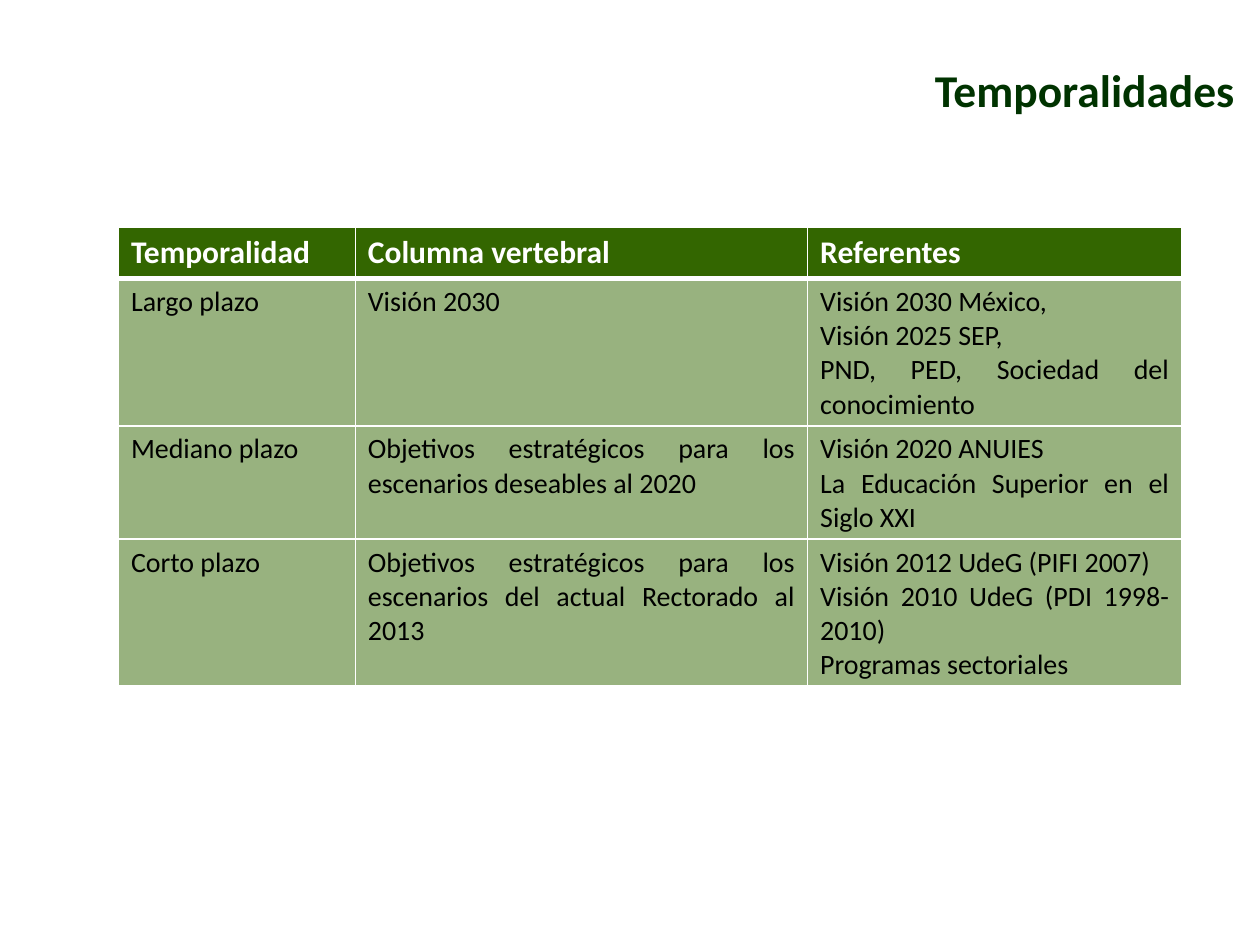
from dataclasses import dataclass

from lxml.etree import SubElement
from pptx import Presentation
from pptx.dml.color import RGBColor as Color
from pptx.enum.text import PP_ALIGN as Align
from pptx.oxml.ns import qn
from pptx.util import Inches, Pt


@dataclass(frozen=True)
class Theme:
    font: str = "Calibri"
    title_color: str = "003300"
    green: str = "336600"
    white: str = "FFFFFF"
    black: str = "000000"
    title_size: int = 26
    header_size: int = 18
    body_size: int = 16
    thin_line: int = 1
    thick_line: int = 3
    body_opacity: int = 50


THEME = Theme()
SLIDE_WIDTH, SLIDE_HEIGHT = 10, 7.5

# Boxes: left, top, width, height in inches
TITLE_BOX = (1.14, 0.44, 8.76, 0.53)
TABLE_BOX = (0.94, 1.8, 8.44, 3.64)
COLUMN_WIDTHS = (1.88, 3.59, 2.97)
ROW_HEIGHTS = (0.41, 1.17, 0.9, 1.16)

HEADER = ("Temporalidad", "Columna vertebral", "Referentes")
TIMEFRAMES = (
    ("Largo plazo", "Visión 2030",
     "Visión 2030 México,\nVisión 2025 SEP,\n"
     "PND, PED, Sociedad del conocimiento"),
    ("Mediano plazo",
     "Objetivos estratégicos para los escenarios deseables al 2020",
     "Visión 2020 ANUIES\nLa Educación Superior en el Siglo XXI"),
    ("Corto plazo",
     "Objetivos estratégicos para los escenarios del actual Rectorado al 2013",
     "Visión 2012 UdeG (PIFI 2007)\nVisión 2010 UdeG (PDI 1998-2010)\n"
     "Programas sectoriales"),
)


def write_text(text_frame, text, size, color, bold, alignment):
    """Write one paragraph per line, all in the same format."""
    text_frame.text = text
    font_format = {"name": THEME.font, "size": Pt(size), "bold": bold}
    for paragraph in text_frame.paragraphs:
        paragraph.alignment = alignment
        for run in paragraph.runs:
            for name, value in font_format.items():
                setattr(run.font, name, value)
            run.font.color.rgb = Color.from_string(color)


def set_borders(cell, top, bottom):
    """Draw the four white cell borders, in the order the schema asks for."""
    properties = cell._tc.get_or_add_tcPr()
    widths = {"lnL": THEME.thin_line, "lnR": THEME.thin_line,
              "lnT": top, "lnB": bottom}
    for side, width in widths.items():
        line = SubElement(properties, qn(f"a:{side}"), w=str(Pt(width)))
        fill = SubElement(line, qn("a:solidFill"))
        SubElement(fill, qn("a:srgbClr"), val=THEME.white)


def fill_cell(cell, opacity):
    cell.fill.solid()
    cell.fill.fore_color.rgb = Color.from_string(THEME.green)
    if opacity < 100:
        color = cell._tc.tcPr.find(f"{qn('a:solidFill')}/{qn('a:srgbClr')}")
        SubElement(color, qn("a:alpha"), val=str(opacity * 1000))


def add_title(slide, box, text):
    text_frame = slide.shapes.add_textbox(*map(Inches, box)).text_frame
    text_frame.word_wrap = True
    write_text(text_frame, text, THEME.title_size, THEME.title_color, True,
               Align.RIGHT)


def add_timeframe_table(slide, box, rows):
    table = slide.shapes.add_table(len(rows), len(COLUMN_WIDTHS),
                                   *map(Inches, box)).table
    for column, width in zip(table.columns, COLUMN_WIDTHS):
        column.width = Inches(width)
    for row, height in zip(table.rows, ROW_HEIGHTS):
        row.height = Inches(height)

    for row_index, texts in enumerate(rows):
        is_header = row_index == 0
        # A thick rule separates the header from the body
        top = THEME.thick_line if row_index == 1 else THEME.thin_line
        bottom = THEME.thick_line if is_header else THEME.thin_line
        size = THEME.header_size if is_header else THEME.body_size
        color = THEME.white if is_header else THEME.black
        opacity = 100 if is_header else THEME.body_opacity
        for column_index, text in enumerate(texts):
            cell = table.cell(row_index, column_index)
            justified = not is_header and column_index > 0
            write_text(cell.text_frame, text, size, color, is_header,
                       Align.JUSTIFY if justified else Align.LEFT)
            set_borders(cell, top, bottom)
            fill_cell(cell, opacity)


def main():
    presentation = Presentation()
    presentation.slide_width = Inches(SLIDE_WIDTH)
    presentation.slide_height = Inches(SLIDE_HEIGHT)
    slide = presentation.slides.add_slide(presentation.slide_layouts[6])

    add_title(slide, TITLE_BOX, "Temporalidades")
    add_timeframe_table(slide, TABLE_BOX, (HEADER, *TIMEFRAMES))

    presentation.save("out.pptx")


if __name__ == "__main__":
    main()
